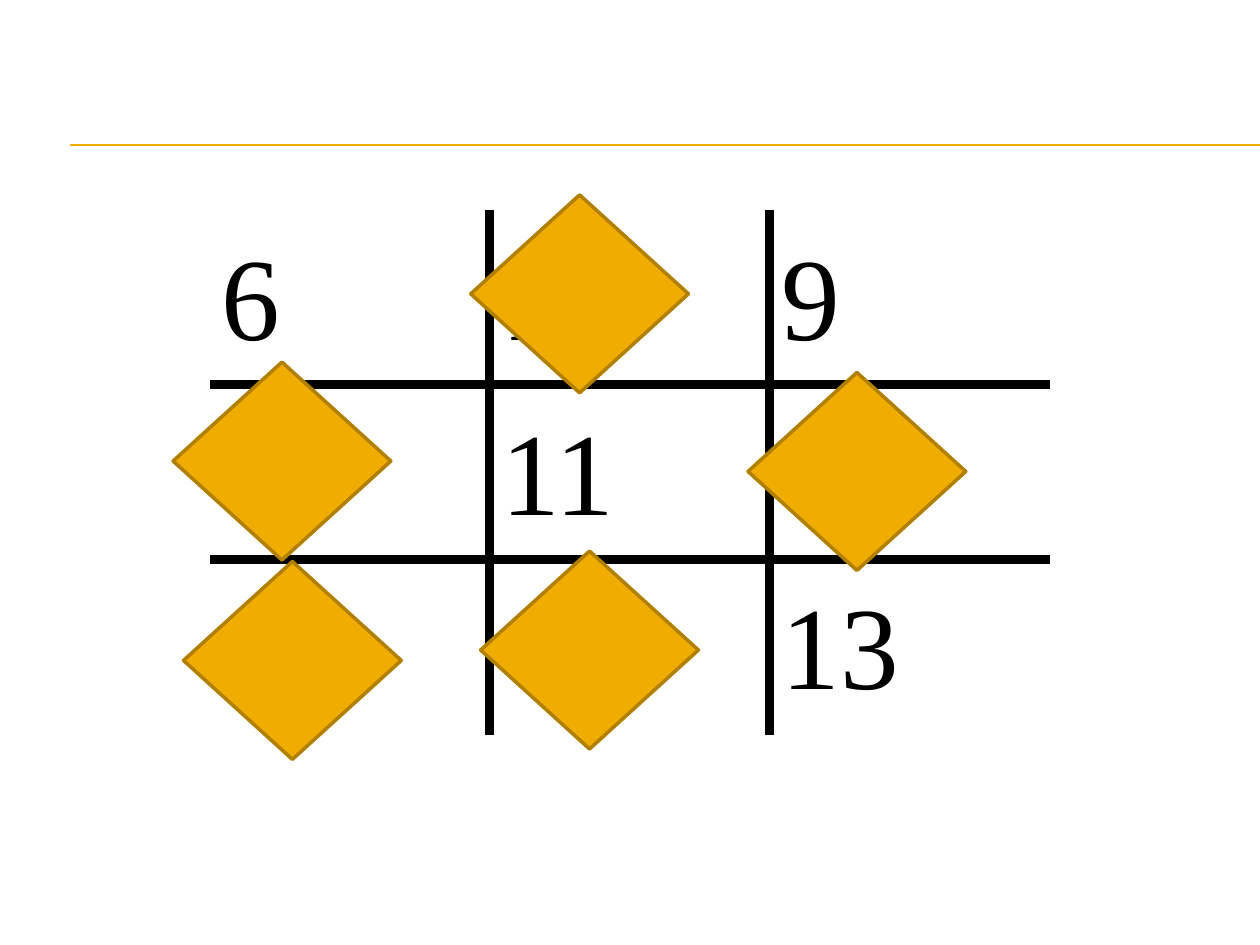
from lxml import etree
from pptx import Presentation
from pptx import util as u
from pptx.dml.color import RGBColor
from pptx.enum import shapes
from pptx.oxml import ns

COLOURS = {"gold": "F0AD00", "bronze": "B28000", "black": "000000"}
NUMBERS = [["6", "15", "9"], ["11", "11", "8"], ["13", "4", "13"]]
DIAMONDS = [(5.26, -0.3), (10.85, 3.28), (-0.74, 3.07), (-0.53, 7.09), (5.46, 6.88)]
DIAMOND_SIZE = (4.39, 3.99)


def colour(name):
    return RGBColor.from_string(COLOURS[name])


def write_text(frame, words, font="Times New Roman", size=67, fill="black",
               spacing=1.15, after=10):
    para = frame.paragraphs[0]
    para.line_spacing = spacing
    para.space_after = u.Pt(after)
    span = para.add_run()
    span.text = words
    span.font.name = font
    span.font.size = u.Pt(size)
    span.font.color.rgb = colour(fill)


def set_borders(cell, sides, width=6):
    properties = cell._tc.get_or_add_tcPr()
    for index, side in enumerate("LRTB"):
        border = etree.Element(ns.qn(f"a:ln{side}"))
        if side in sides:
            border.set("w", str(u.Pt(width)))
            fill = etree.SubElement(border, ns.qn("a:solidFill"))
            etree.SubElement(fill, ns.qn("a:srgbClr"), val=COLOURS["black"])
        else:
            etree.SubElement(border, ns.qn("a:noFill"))
        properties.insert(index, border)


def add_header_rules(page, left, top, width, gap=0.02):
    for y in (top, top + gap):
        rule = page.shapes.add_connector(
            shapes.MSO_CONNECTOR.STRAIGHT,
            u.Cm(left), u.Cm(y), u.Cm(left + width), u.Cm(y))
        rule.line.color.rgb = colour("gold")
        rule.line.width = u.Pt(0.75)
        etree.SubElement(rule._element.spPr, ns.qn("a:effectLst"))


def add_number_grid(page, left, top, width, height):
    count = len(NUMBERS)
    table = page.shapes.add_table(
        count, count, u.Cm(left), u.Cm(top), u.Cm(width), u.Cm(height)).table
    table.first_row = False
    table.horz_banding = False
    for line in table.columns:
        line.width = u.Cm(width / count)
    for line in table.rows:
        line.height = u.Cm(height / count)
    last = count - 1
    for row, numbers in enumerate(NUMBERS):
        for column, number in enumerate(numbers):
            cell = table.cell(row, column)
            cell.fill.background()
            cell.margin_left = cell.margin_right = u.Cm(0.24)
            cell.margin_top = cell.margin_bottom = u.Cm(0.13)
            write_text(cell.text_frame, number)
            inner = {"L": column > 0, "R": column < last,
                     "T": row > 0, "B": row < last}
            set_borders(cell, [side for side, shown in inner.items() if shown])


def add_diamonds(page, left, top):
    width, height = DIAMOND_SIZE
    for x, y in DIAMONDS:
        diamond = page.shapes.add_shape(
            shapes.MSO_SHAPE.DIAMOND,
            u.Cm(left + x), u.Cm(top + y), u.Cm(width), u.Cm(height))
        diamond.shadow.inherit = False
        diamond.fill.solid()
        diamond.fill.fore_color.rgb = colour("gold")
        diamond.line.color.rgb = colour("bronze")
        diamond.line.width = u.Pt(2)


def main():
    deck = Presentation()
    deck.slide_width = u.Cm(25.4)
    deck.slide_height = u.Cm(19.05)
    page = deck.slides.add_slide(deck.slide_layouts[6])
    add_header_rules(page, 1.42, 2.92, 23.98)
    add_number_grid(page, 4.23, 4.23, 16.93, 10.58)
    add_diamonds(page, 4.23, 4.23)
    deck.save("out.pptx")


if __name__ == "__main__":
    main()
